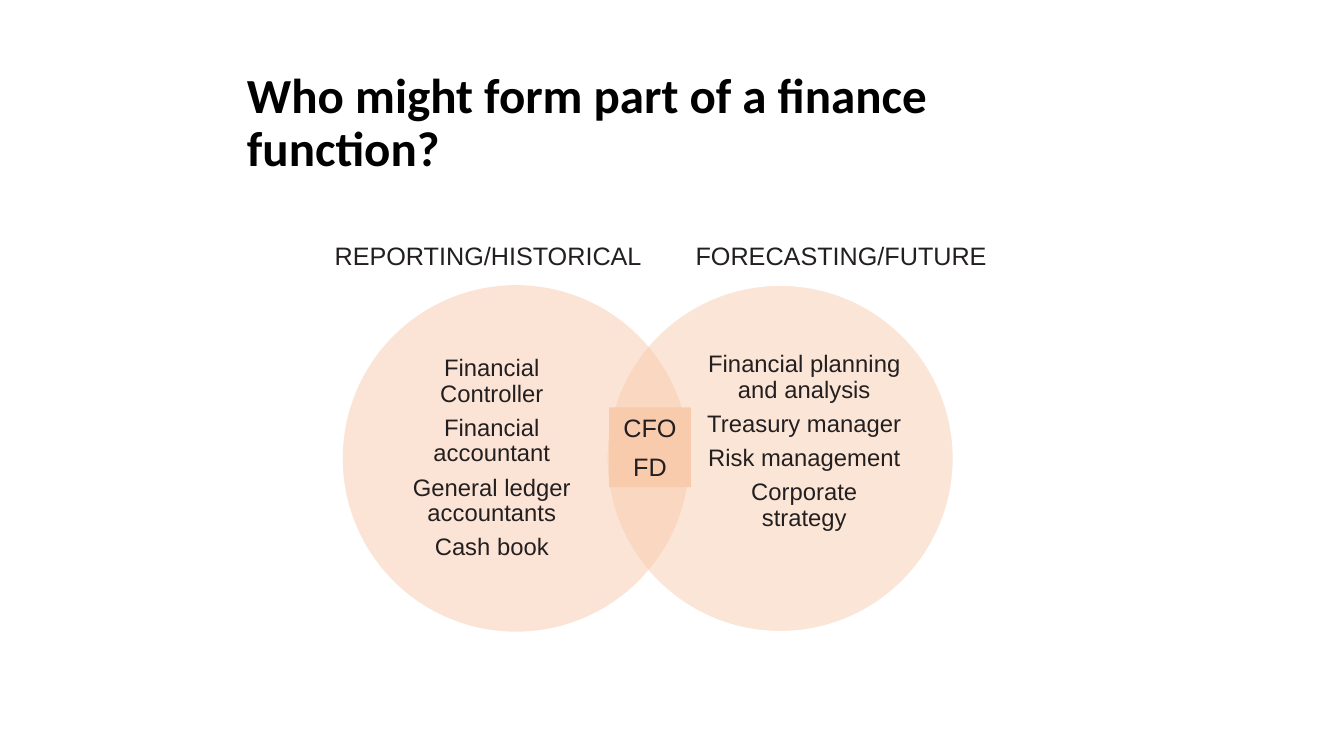
import pptx
import pptx.util
import pptx.dml.color
import pptx.enum.shapes
import pptx.enum.text
import lxml.etree

SHAPE = pptx.enum.shapes.MSO_SHAPE
ALIGN = pptx.enum.text.PP_ALIGN
ANCHOR = pptx.enum.text.MSO_ANCHOR
COLS, ROWS = 64, 36


def rgb(hex_color):
    return pptx.dml.color.RGBColor.from_string(hex_color)


def write(tf, *lines, size=18, font="Arial", color="231F20", bold=False,
          align=ALIGN.LEFT, anchor=ANCHOR.TOP, spacing=1.0, after=6):
    """Fill a text frame with one paragraph per line."""
    tf.word_wrap = True
    tf.auto_size = pptx.enum.text.MSO_AUTO_SIZE.NONE
    tf.vertical_anchor = anchor
    for i, line in enumerate(lines):
        p = tf.paragraphs[0] if i == 0 else tf.add_paragraph()
        p.alignment = align
        p.line_spacing = spacing
        p.space_before = pptx.util.Pt(0)
        p.space_after = pptx.util.Pt(after)
        r = p.add_run()
        r.text = line
        r.font.size = pptx.util.Pt(size)
        r.font.name = font
        r.font.bold = bold
        r.font.color.rgb = rgb(color)


class VennSlide:
    """Slide measured on a grid of 64 by 36 square cells."""

    def __init__(self, prs):
        self.cell_w = prs.slide_width / COLS
        self.cell_h = prs.slide_height / ROWS
        self.s = prs.slides.add_slide(prs.slide_layouts[5])

    def box(self, col, row, cols, rows):
        return (round(col * self.cell_w), round(row * self.cell_h),
                round(cols * self.cell_w), round(rows * self.cell_h))

    def title(self, text, *place):
        sp = self.s.shapes.title
        sp.left, sp.top, sp.width, sp.height = self.box(*place)
        write(sp.text_frame, text, size=35, font="Calibri", color="000000",
              bold=True, anchor=ANCHOR.MIDDLE, spacing=0.9, after=0)

    def label(self, text, *place):
        sp = self.s.shapes.add_textbox(*self.box(*place))
        write(sp.text_frame, text)

    def shape(self, kind, place, fill, alpha=None, outline=None):
        sp = self.s.shapes.add_shape(kind, *self.box(*place))
        sp.shadow.inherit = False
        sp.fill.solid()
        sp.fill.fore_color.rgb = rgb(fill)
        if alpha is not None:
            clr = sp.fill._xPr.find(".//" + pptx.oxml.ns.qn("a:srgbClr"))
            lxml.etree.SubElement(clr, pptx.oxml.ns.qn("a:alpha"),
                                  val=str(alpha * 1000))
        if outline:
            sp.line.color.rgb = rgb(outline)
            sp.line.width = pptx.util.Pt(1)
        else:
            sp.line.fill.background()
        return sp

    def circle(self, lines, col, row, size, insets, **style):
        """Insets are left, right and bottom, in cells."""
        sp = self.shape(SHAPE.OVAL, (col, row, size, size), **style)
        tf = sp.text_frame
        left, right, bottom = insets
        tf.margin_left = round(left * self.cell_w)
        tf.margin_right = round(right * self.cell_w)
        tf.margin_top = 0
        tf.margin_bottom = round(bottom * self.cell_h)
        write(tf, *lines, size=17, align=ALIGN.CENTER,
              anchor=ANCHOR.MIDDLE, spacing=0.9)

    def overlap(self, lines, *place):
        sp = self.shape(SHAPE.RECTANGLE, place, fill="F8CBAD")
        write(sp.text_frame, *lines, align=ALIGN.CENTER)


def main():
    prs = pptx.Presentation()
    prs.slide_width = pptx.util.Inches(13.33)
    prs.slide_height = pptx.util.Inches(7.5)
    venn = VennSlide(prs)

    venn.title("Who might form part of a finance function?",
               11.28, 2.93, 41.38, 5.95)
    venn.circle(["Financial planning and analysis", "Treasury manager",
                 "Risk management", "Corporate strategy"],
                28.9, 13.58, 16.5, (2.3, 0, 1.6),
                fill="FBE5D6", outline="FFFFFF")
    venn.circle(["Financial Controller", "Financial accountant",
                 "General ledger accountants", "Cash book"],
                16.32, 13.58, 16.5, (0, 2.3, 0),
                fill="F8CBAD", alpha=50)
    for text, col in (("REPORTING/HISTORICAL", 15.46),
                      ("FORECASTING/FUTURE", 32.65)):
        venn.label(text, col, 11.23, 16.9, 1.92)
    venn.overlap(["CFO", "FD"], 29, 19.4, 3.9, 3.8)

    prs.save("out.pptx")


if __name__ == "__main__":
    main()
